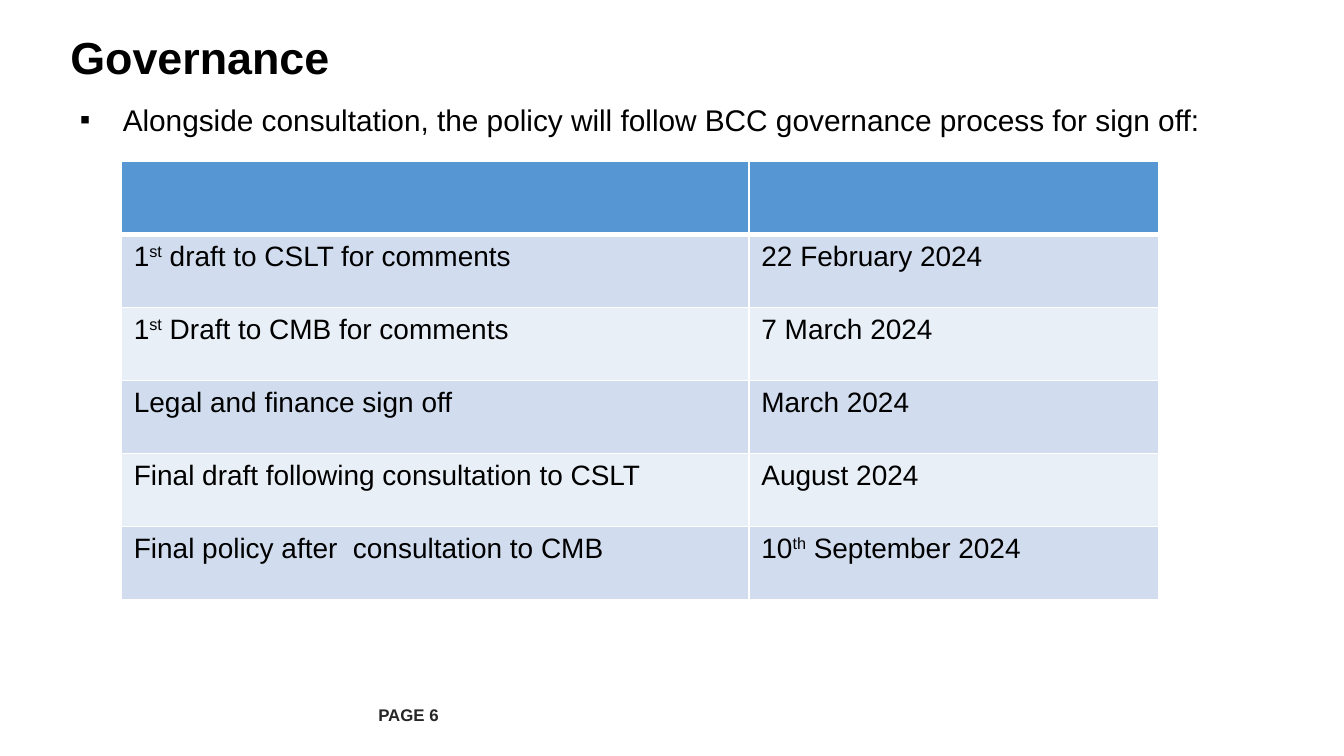
"""Build the governance slide: a lead-in bullet and a table of sign-off dates."""

from dataclasses import dataclass
from itertools import cycle

from lxml.etree import SubElement
from pptx import Presentation
from pptx.dml.color import RGBColor as Color
from pptx.enum.text import MSO_ANCHOR as Anchor, MSO_AUTO_SIZE as AutoSize, PP_ALIGN as Align
from pptx.oxml import parse_xml
from pptx.oxml.ns import nsdecls, qn
from pptx.util import Cm, Pt


@dataclass(frozen=True)
class Theme:
    font: str = "Arial"
    ink: str = "000000"
    footer_ink: str = "262626"
    header: str = "5696D2"
    bands: tuple[str, str] = ("D1DDEE", "E9EFF7")
    border: str = "FFFFFF"
    title_size: float = 24
    body_size: float = 16
    table_size: float = 15
    footer_size: float = 9


@dataclass(frozen=True)
class Place:
    left: float
    top: float
    width: float
    height: float

    def lengths(self) -> tuple[Cm, Cm, Cm, Cm]:
        return Cm(self.left), Cm(self.top), Cm(self.width), Cm(self.height)


@dataclass(frozen=True)
class Milestone:
    step: str
    date: str


THEME = Theme()
COLUMNS = (11.86, 7.75)
ROW_HEIGHT = 1.38
MARGIN_X, MARGIN_Y = Cm(0.24), Cm(0.12)
MILESTONES = (
    Milestone("1^st^ draft to CSLT for comments", "22 February 2024"),
    Milestone("1^st^ Draft to CMB for comments", "7 March 2024"),
    Milestone("Legal and finance sign off", "March 2024"),
    Milestone("Final draft following consultation to CSLT", "August 2024"),
    Milestone("Final policy after  consultation to CMB", "10^th^ September 2024"),
)


def write(para, text: str, *, size: float, color: str = THEME.ink, bold: bool = False) -> None:
    """Add text to a paragraph, raising the parts between carets."""
    para.alignment = Align.LEFT
    para.space_before = Pt(0)
    for index, part in enumerate(text.split("^")):
        span = para.add_run()
        span.text = part
        span.font.name = THEME.font
        span.font.size = Pt(size)
        span.font.bold = bold
        span.font.color.rgb = Color.from_string(color)
        if index % 2:
            span.font._element.set("baseline", "30000")


def set_up_box(box, place: Place, anchor: Anchor):
    """Place a text shape, fix its frame and return its first paragraph."""
    box.left, box.top, box.width, box.height = place.lengths()
    frame = box.text_frame
    frame.word_wrap = True
    frame.auto_size = AutoSize.NONE
    frame.vertical_anchor = anchor
    frame.margin_left = frame.margin_right = MARGIN_X
    frame.margin_top = frame.margin_bottom = MARGIN_Y
    return frame.paragraphs[0]


def add_bullet(para, mark: str, indent: Cm) -> None:
    """Give a paragraph a hanging bullet."""
    properties = para._p.get_or_add_pPr()
    properties.set("marL", str(indent))
    properties.set("indent", str(-indent))
    SubElement(properties, qn("a:buFont"), typeface=THEME.font)
    SubElement(properties, qn("a:buChar"), char=mark)


def format_cell(cell, fill: str, *, top: float = 1, bottom: float = 1) -> None:
    """Fill a cell, set its margins and draw its four borders."""
    cell.fill.solid()
    cell.fill.fore_color.rgb = Color.from_string(fill)
    cell.margin_left = cell.margin_right = MARGIN_X
    cell.margin_top = cell.margin_bottom = MARGIN_Y
    properties = cell._tc.get_or_add_tcPr()
    widths = {"lnL": 1, "lnR": 1, "lnT": top, "lnB": bottom}
    for index, (side, width) in enumerate(widths.items()):
        line = parse_xml(
            f'<a:{side} {nsdecls("a")} w="{Pt(width)}"><a:solidFill>'
            f'<a:srgbClr val="{THEME.border}"/></a:solidFill></a:{side}>'
        )
        properties.insert(index, line)


def add_schedule(page, left: float, top: float, milestones: tuple[Milestone, ...]) -> None:
    """Draw the milestones under an empty header row."""
    count = len(milestones) + 1
    place = Place(left, top, sum(COLUMNS), ROW_HEIGHT * count)
    table = page.shapes.add_table(count, len(COLUMNS), *place.lengths()).table
    for column, width in zip(table.columns, COLUMNS):
        column.width = Cm(width)
    for row in table.rows:
        row.height = Cm(ROW_HEIGHT)
    for cell in table.rows[0].cells:
        format_cell(cell, THEME.header, bottom=3)
    for index, (milestone, band) in enumerate(zip(milestones, cycle(THEME.bands)), start=1):
        texts = (milestone.step, milestone.date)
        for cell, text in zip(table.rows[index].cells, texts):
            format_cell(cell, band, top=3 if index == 1 else 1)
            write(cell.text_frame.paragraphs[0], text, size=THEME.table_size)


def main() -> None:
    """Build and save the deck."""
    deck = Presentation()
    deck.slide_width, deck.slide_height = Cm(25.4), Cm(14.28)
    page = deck.slides.add_slide(deck.slide_layouts[1])

    title = set_up_box(page.shapes.title, Place(1.09, 0.36, 22.86, 1.4), Anchor.MIDDLE)
    write(title, "Governance", size=THEME.title_size, bold=True)

    lead = set_up_box(page.placeholders[1], Place(1.27, 1.8, 22.86, 9.42), Anchor.TOP)
    add_bullet(lead, "▪", Cm(0.81))
    write(
        lead,
        "Alongside consultation, the policy will follow BCC governance process for sign off:",
        size=THEME.body_size,
    )

    add_schedule(page, 2.29, 3.05, MILESTONES)

    footer_place = Place(6.91, 13.13, 2.21, 0.76)
    footer_box = page.shapes.add_textbox(*footer_place.lengths())
    footer = set_up_box(footer_box, footer_place, Anchor.MIDDLE)
    write(footer, "PAGE 6", size=THEME.footer_size, color=THEME.footer_ink, bold=True)

    deck.save("out.pptx")


if __name__ == "__main__":
    main()
